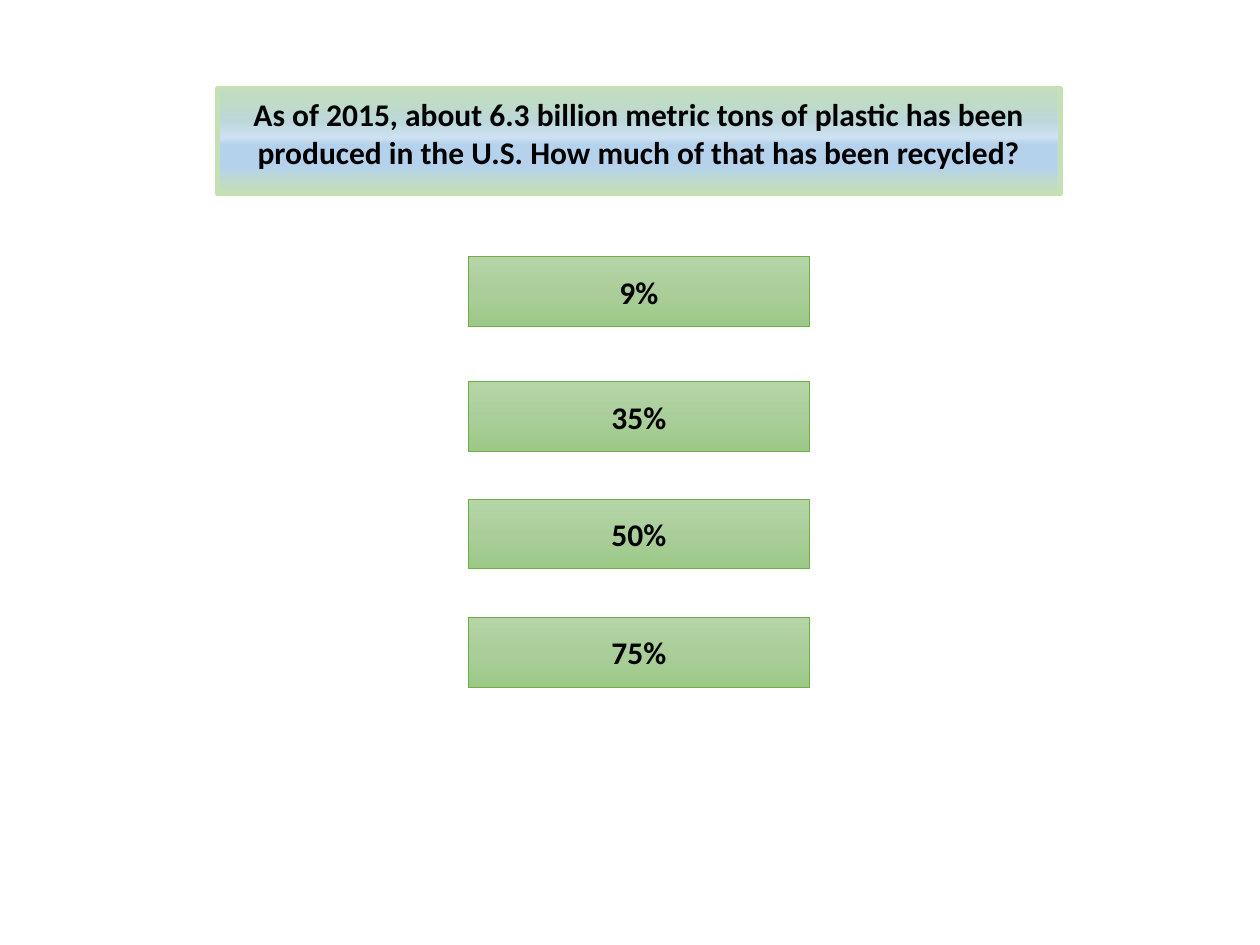
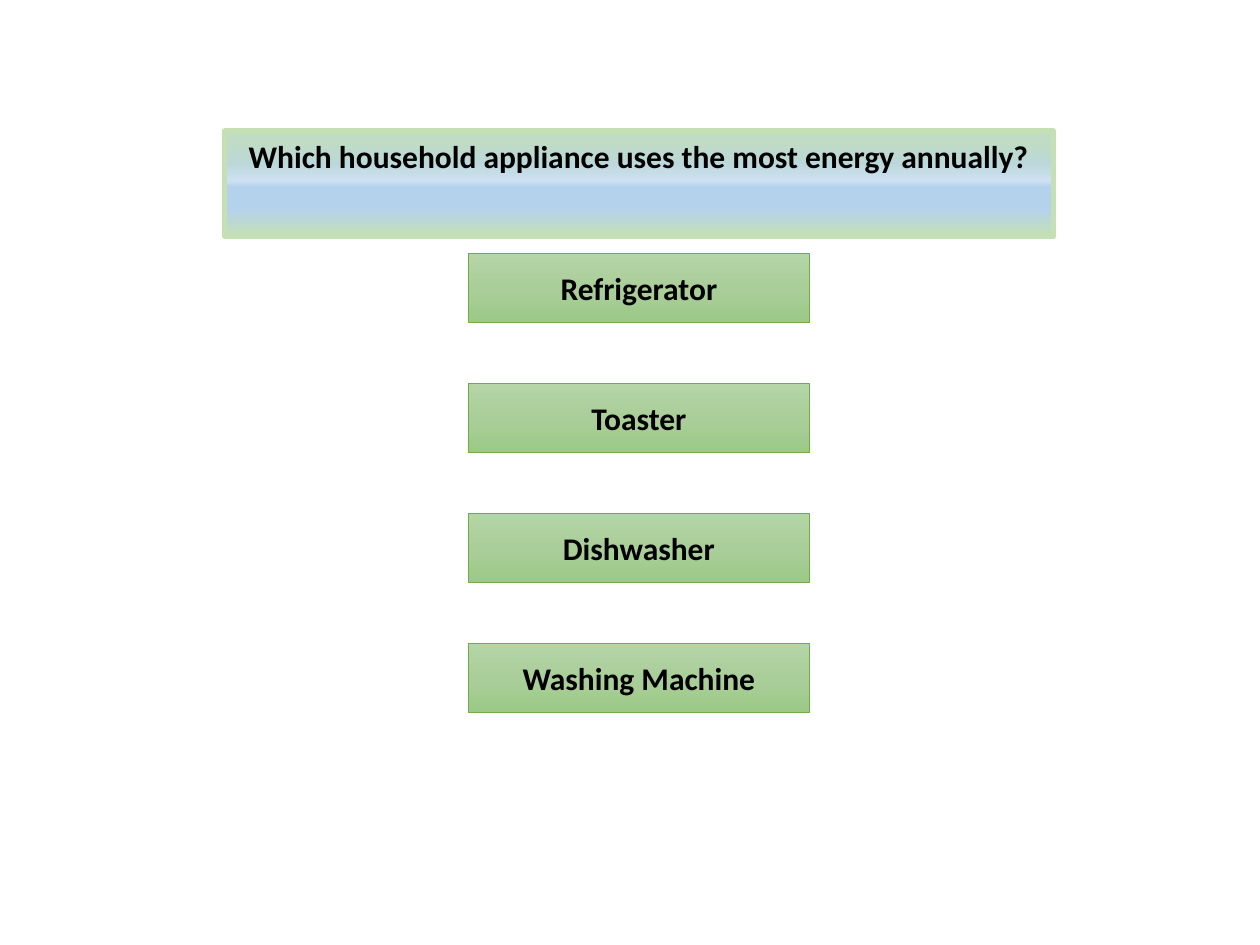
from dataclasses import dataclass

from lxml import etree
from pptx import Presentation
from pptx import util as u
from pptx.dml.color import RGBColor
from pptx.enum import shapes, text
from pptx.oxml import ns


@dataclass(frozen=True)
class Theme:
    """Colours, type and line weights shared by the quiz slides."""
    font: str = "Calibri"
    size: int = 18
    ink: str = "000000"
    question_line: tuple = ("C5E0B4", 3)
    question_stops: tuple = ((12, "C0DCC5"), (30, "BBD7D9"), (47, "CEE1F2"),
                             (53, "B5D2EC"), (74, "B5D2EC"), (100, "C5E0B4"))
    answer_line: tuple = ("70AD47", 0.5)
    answer_stops: tuple = ((0, "B5D5A7"), (50, "AACE9A"), (100, "9CC987"))


THEME = Theme()
CENTRE = 12.88
ANSWER_WIDTH, ANSWER_HEIGHT = 6.86, 1.4

QUIZ = [
    dict(question="As of 2015, about 6.3 billion metric tons of plastic has been "
                  "produced in the U.S. How much of that has been recycled?",
         box=(1.78, 16.99, 1.8),
         answers=["9%", "35%", "50%", "75%"],
         tops=[5.18, 7.7, 10.06, 12.45]),
    dict(question="Which household appliance uses the most energy annually?",
         box=(2.64, 16.71, 1.02),
         answers=["Refrigerator", "Toaster", "Dishwasher", "Washing Machine"],
         tops=[5.11 + 2.62 * i for i in range(4)]),
]


def set_all(obj, **values):
    """Set each named attribute on an object."""
    for name, value in values.items():
        setattr(obj, name, value)


def place(sp, top, width, height):
    """Centre a shape on the quiz column at the given top, in cm."""
    set_all(sp, left=u.Cm(CENTRE - width / 2), top=u.Cm(top),
            width=u.Cm(width), height=u.Cm(height))


def paint(sp, stops, line):
    """Give a shape a top-to-bottom gradient and an outline."""
    sp.fill.gradient()
    sp.fill.gradient_angle = 270
    gs_list = sp._element.spPr.find(".//" + ns.qn("a:gsLst"))
    for gs in list(gs_list):
        gs_list.remove(gs)
    for position, colour in stops:
        gs = etree.SubElement(gs_list, ns.qn("a:gs"), pos=str(position * 1000))
        etree.SubElement(gs, ns.qn("a:srgbClr"), val=colour)
    colour, weight = line
    sp.line.color.rgb = RGBColor.from_string(colour)
    sp.line.width = u.Pt(weight)


def write(sp, words, anchor, auto_size):
    """Fill a shape with centred bold text."""
    tf = sp.text_frame
    set_all(tf, word_wrap=True, auto_size=auto_size, vertical_anchor=anchor,
            margin_left=u.Cm(0.25), margin_right=u.Cm(0.25),
            margin_top=u.Cm(0.13), margin_bottom=u.Cm(0.13))
    p = tf.paragraphs[0]
    p.alignment = text.PP_ALIGN.CENTER
    r = p.add_run()
    r.text = words
    set_all(r.font, name=THEME.font, size=u.Pt(THEME.size), bold=True)
    r.font.color.rgb = RGBColor.from_string(THEME.ink)


def add_question(s, words, box):
    """Format the title placeholder as the question band."""
    sp = s.shapes.title
    place(sp, *box)
    paint(sp, THEME.question_stops, THEME.question_line)
    write(sp, words, text.MSO_ANCHOR.TOP, text.MSO_AUTO_SIZE.SHAPE_TO_FIT_TEXT)


def add_answer(s, words, top):
    """Add one answer button at the given top."""
    sp = s.shapes.add_shape(shapes.MSO_SHAPE.ACTION_BUTTON_CUSTOM, 0, 0, 0, 0)
    sp.shadow.inherit = False
    place(sp, top, ANSWER_WIDTH, ANSWER_HEIGHT)
    paint(sp, THEME.answer_stops, THEME.answer_line)
    write(sp, words, text.MSO_ANCHOR.MIDDLE, text.MSO_AUTO_SIZE.NONE)


def add_quiz_slide(prs, question, box, answers, tops):
    """Add a slide with a question and its column of answers."""
    s = prs.slides.add_slide(prs.slide_layouts.get_by_name("Title Only"))
    add_question(s, question, box)
    for words, top in zip(answers, tops):
        add_answer(s, words, top)


def main():
    """Build the quiz and save it."""
    prs = Presentation()
    set_all(prs, slide_width=u.Cm(25.4), slide_height=u.Cm(19.05))
    for quiz in QUIZ:
        add_quiz_slide(prs, **quiz)
    prs.save("out.pptx")


if __name__ == "__main__":
    main()
